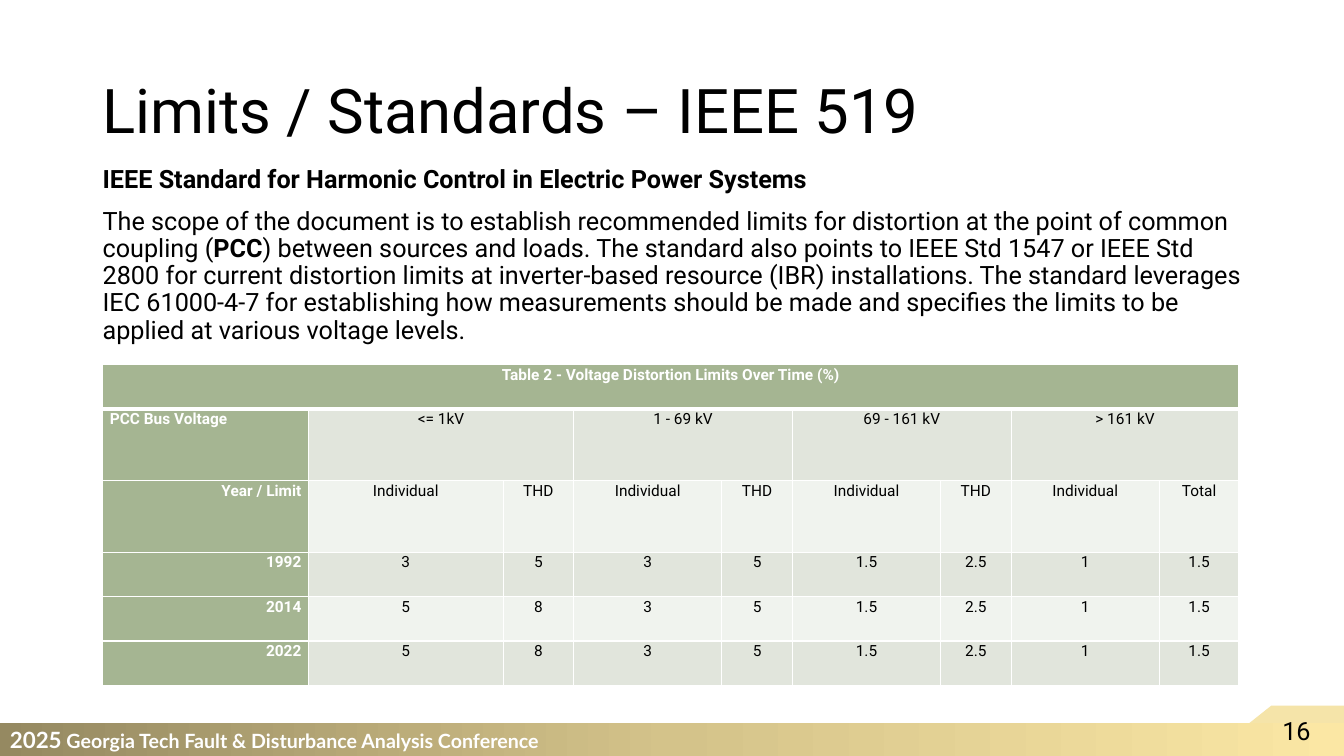
from copy import deepcopy

from lxml import etree
from pptx import Presentation
from pptx.dml.color import RGBColor
from pptx.enum.shapes import MSO_SHAPE
from pptx.enum.text import MSO_ANCHOR, PP_ALIGN
from pptx.oxml.ns import qn
from pptx.util import Emu, Pt

RECT = MSO_SHAPE.RECTANGLE
TOP, MIDDLE = MSO_ANCHOR.TOP, MSO_ANCHOR.MIDDLE
LEFT, CENTER, RIGHT = PP_ALIGN.LEFT, PP_ALIGN.CENTER, PP_ALIGN.RIGHT

PX = 9144  # 100 px to the inch
COLORS = {
    "text": "000000", "white": "FFFFFF", "tab": "F5E4A9",
    "bar_start": "958961", "bar_mid": "D4C38A", "bar_end": "FBE7A4",
    "head": "A5B592", "band_dark": "E1E5DC", "band_light": "F0F3EE",
}


def rgb(name):
    return RGBColor.from_string(COLORS[name])


class Deck:
    """Holds the slide style and the current slide."""

    font = "Roboto"

    def __init__(self, width, height):
        self.prs = Presentation()
        self.prs.slide_width, self.prs.slide_height = Emu(width * PX), Emu(height * PX)
        self.s = self.prs.slides.add_slide(self.prs.slide_layouts[6])

    def box(self, at):
        return [Emu(v * PX) for v in at]

    def style(self, font, size, color, bold=None, name=None):
        font.name, font.size, font.bold = name or self.font, Pt(size), bold
        font.color.rgb = rgb(color)

    def text(self, at, paragraphs, size, anchor=TOP, line=None, before=0):
        """Each paragraph is a list of (text, bold) runs."""
        tf = self.s.shapes.add_textbox(*self.box(at)).text_frame
        tf.word_wrap, tf.vertical_anchor = True, anchor
        for i, runs in enumerate(paragraphs):
            p = tf.add_paragraph() if i else tf.paragraphs[0]
            p.line_spacing = line
            if i:
                p.space_before = Pt(before)
            same = len({bold for _, bold in runs}) == 1
            self.style(p.font, size, "text", runs[0][1] if same else None)
            for words, bold in runs:
                r = p.add_run()
                r.text = words
                if not same:
                    r.font.bold = bold

    def polygon(self, points, color):
        fb = self.s.shapes.build_freeform(*points[0], scale=PX)
        fb.add_line_segments(points[1:], close=True)
        sp = fb.convert_to_shape()
        sp.shadow.inherit = False
        sp.fill.solid()
        sp.fill.fore_color.rgb = rgb(color)
        sp.line.fill.background()

    def gradient_bar(self, at, colors, runs):
        """Each run is (text, size)."""
        sp = self.s.shapes.add_shape(RECT, *self.box(at))
        sp.shadow.inherit = False
        sp.line.fill.background()
        sp.fill.gradient()
        sp.fill.gradient_angle = 0
        first = sp.fill._fill._gradFill.find(qn("a:gsLst"))[0]
        for _ in colors[2:]:
            first.addnext(deepcopy(first))
        for i, (stop, color) in enumerate(zip(sp.fill.gradient_stops, colors)):
            stop.position = i / (len(colors) - 1)
            stop.color.rgb = rgb(color)
        tf = sp.text_frame
        tf.vertical_anchor = MIDDLE
        p = tf.paragraphs[0]
        p.alignment = LEFT
        for words, size in runs:
            r = p.add_run()
            r.text = words
            self.style(r.font, size, "white", True, "Lato")

    def cell(self, cell, words, fill, color, bold, align, top=1, bottom=1):
        tcPr = cell._tc.get_or_add_tcPr()
        for side, width in zip("LRTB", (1, 1, top, bottom)):
            ln = etree.SubElement(tcPr, qn(f"a:ln{side}"), w=str(Pt(width)))
            solid = etree.SubElement(ln, qn("a:solidFill"))
            etree.SubElement(solid, qn("a:srgbClr"), val=COLORS["white"])
        cell.fill.solid()
        cell.fill.fore_color.rgb = rgb(fill)
        cell.margin_left = cell.margin_right = Emu(7 * PX)
        cell.margin_top = cell.margin_bottom = 0
        cell.text = words
        p = cell.text_frame.paragraphs[0]
        p.alignment, p.line_spacing, p.space_after = align, 1.07, Pt(8)
        self.style(p.font, 11, color, bold)

    def table(self, at, widths, heights, rows, merges):
        """First row and first column are headings; the other rows are banded."""
        tbl = self.s.shapes.add_table(len(rows), len(widths), *self.box(at)).table
        for col, width in zip(tbl.columns, widths):
            col.width = Emu(width * PX)
        for row, height in zip(tbl.rows, heights):
            row.height = Emu(height * PX)
        for i, row in enumerate(rows):
            for j, words in enumerate(row):
                head = i == 0 or j == 0
                fill = "head" if head else "band_dark" if i % 2 else "band_light"
                align = CENTER if i == 0 or j else LEFT if i == 1 else RIGHT
                self.cell(tbl.cell(i, j), words, fill, "white" if head else "text",
                          head, align, top=3 if i == 1 else 1, bottom=1 if i else 3)
        for row, start, end in merges:
            tbl.cell(row, start).merge(tbl.cell(row, end))


def main():
    deck = Deck(1333, 750)

    # Footer
    deck.polygon([(1261, 700), (1198, 750), (1333, 750), (1333, 700)], "tab")
    deck.gradient_bar((0, 717, 1333, 33), ("bar_start", "bar_mid", "bar_end"),
                      [("2025", 16),
                       (" Georgia Tech Fault & Disturbance Analysis Conference", 14)])
    deck.text((1262, 705, 71, 40), [[("16", False)]], 18)

    # Title and scope
    deck.text((92, 40, 1150, 145), [[("Limits / Standards – IEEE 519", False)]], 44,
              MIDDLE, line=0.9)
    deck.text((92, 161, 1150, 476), [
        [("IEEE Standard for Harmonic Control in Electric Power Systems", True)],
        [("The scope of the document is to establish recommended limits for distortion "
          "at the point of common coupling (", False),
         ("PCC", True),
         (") between sources and loads. The standard also points to IEEE Std 1547 or "
          "IEEE Std 2800 for current distortion limits at inverter-based resource (IBR) "
          "installations. The standard leverages IEC 61000-4-7 for establishing how "
          "measurements should be made and specifies the limits to be applied at "
          "various voltage levels.", False)],
    ], 18, line=0.9, before=10)

    # Voltage limits table
    recent = ["5", "8", "3", "5", "1.5", "2.5", "1", "1.5"]
    rows = [
        ["Table 2 - Voltage Distortion Limits Over Time (%)"] + [""] * 8,
        ["PCC Bus Voltage", "<= 1kV", "", "1 - 69 kV", "", "69 - 161 kV", "",
         "> 161 kV", ""],
        ["Year / Limit"] + ["Individual", "THD"] * 3 + ["Individual", "Total"],
        ["1992", "3", "5"] + recent[2:],
        ["2014"] + recent,
        ["2022"] + recent,
    ]
    merges = [(0, 0, 8)] + [(1, j, j + 1) for j in range(1, 9, 2)]
    deck.table((102, 362, 1129, 319), [204, 193, 70, 147, 70, 147, 70, 147, 79],
               [44, 71, 71, 44, 44, 44], rows, merges)

    deck.prs.save("out.pptx")


if __name__ == "__main__":
    main()
